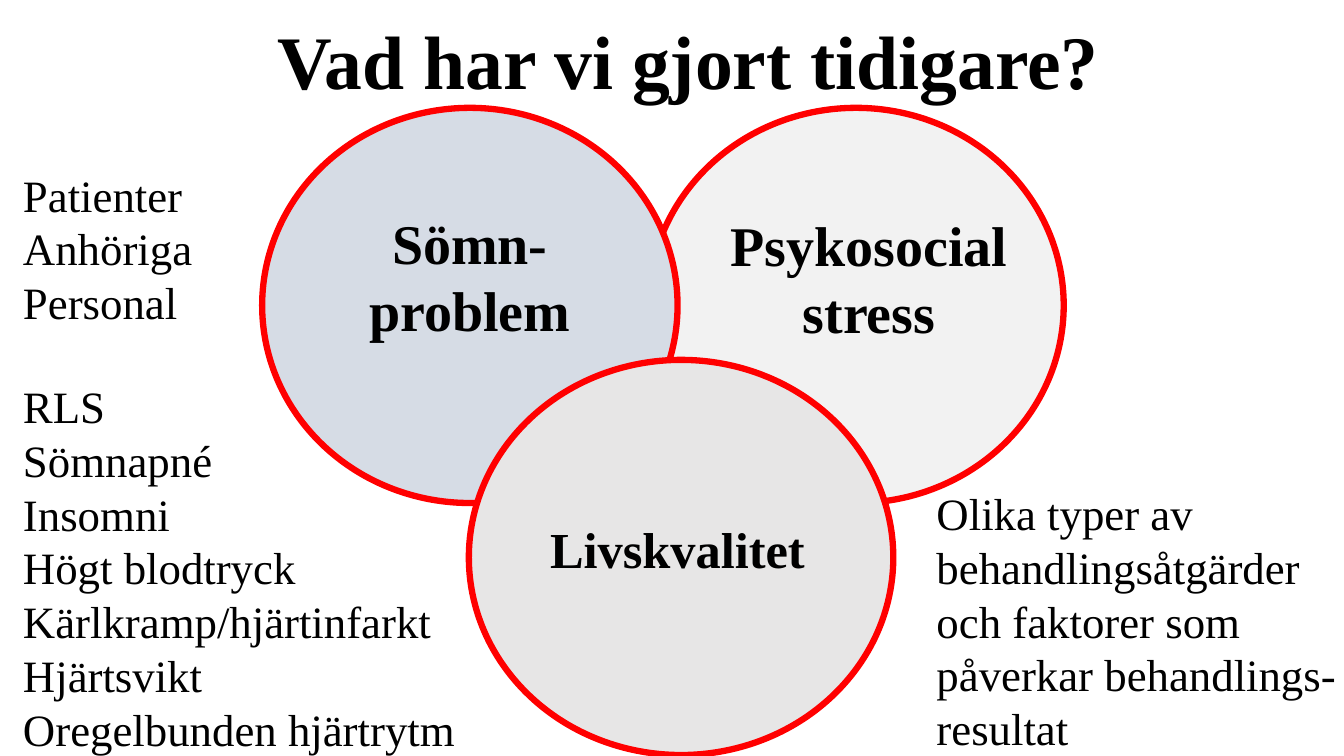
import pptx
import pptx.util
import pptx.dml.color
import pptx.enum.shapes
import pptx.enum.text

Inches = pptx.util.Inches
ALIGN = pptx.enum.text.PP_ALIGN
FONT = "Times New Roman"


def color(hex_value):
    return pptx.dml.color.RGBColor.from_string(hex_value)


def write_lines(frame, lines, size, bold=False, align=ALIGN.LEFT, spacing=None):
    font_format = {"name": FONT, "size": pptx.util.Pt(size), "bold": bold}
    for index, line in enumerate(lines):
        paragraph = frame.add_paragraph() if index else frame.paragraphs[0]
        paragraph.alignment = align
        paragraph.line_spacing = spacing
        run = paragraph.add_run()
        run.text = line
        for key, value in font_format.items():
            setattr(run.font, key, value)
        run.font.color.rgb = color("000000")


def add_text(slide, box, lines, size, wrap=False, **style):
    frame = slide.shapes.add_textbox(*map(Inches, box)).text_frame
    frame.word_wrap = wrap
    write_lines(frame, lines, size, **style)


def add_title(slide, box, text):
    title = slide.shapes.title
    placement = dict(zip(("left", "top", "width", "height"), map(Inches, box)))
    for key, value in placement.items():
        setattr(title, key, value)
    title.text_frame.vertical_anchor = pptx.enum.text.MSO_ANCHOR.MIDDLE
    write_lines(title.text_frame, [text], 54, bold=True, align=ALIGN.CENTER, spacing=0.9)


def add_circle(slide, box, fill):
    circle = slide.shapes.add_shape(
        pptx.enum.shapes.MSO_SHAPE.OVAL, *map(Inches, box))
    circle.shadow.inherit = False
    circle.fill.solid()
    circle.fill.fore_color.rgb = color(fill)
    circle.line.color.rgb = color("FF0000")
    circle.line.width = pptx.util.Pt(4.5)


def add_venn(slide, box):
    left, top, width, height = box
    diameter_x, diameter_y = 4.12, 3.92
    lower_top = top + height - diameter_y
    add_circle(slide, (left + width - diameter_x, top, diameter_x, diameter_y), "F2F2F2")
    add_circle(slide, (left, top, diameter_x, diameter_y), "D6DCE5")
    add_circle(slide, (left + 2.05, lower_top, 4.21, diameter_y), "E7E6E6")
    labels = [
        (4.22, 0.97, 1.45, ["Psykosocial stress"], 40),
        (0.26, 0.95, 1.45, ["Sömn-", "problem"], 40),
        (2.32, 4.02, 0.71, ["Livskvalitet"], 36),
    ]
    for dx, dy, label_height, lines, size in labels:
        add_text(slide, (left + dx, top + dy, 3.6, label_height), lines, size,
                 wrap=True, bold=True, align=ALIGN.CENTER)


def add_side_lists(slide, box):
    left, top, width, height = box
    groups = ["Patienter", "Anhöriga", "Personal"]
    diagnoses = ["RLS", "Sömnapné", "Insomni", "Högt blodtryck",
                 "Kärlkramp/hjärtinfarkt", "Hjärtsvikt", "Oregelbunden hjärtrytm"]
    treatments = ["Olika typer av", "behandlingsåtgärder", "och faktorer som",
                  "påverkar behandlings-", "resultat"]
    add_text(slide, (left, top, 1.9, 1.72), groups, 32)
    add_text(slide, (left + width - 4.2, top + 3.16, 4.2, 2.79), treatments, 32)
    add_text(slide, (left, top + 2.1, 4.53, 3.87), diagnoses, 32)


def main():
    presentation = pptx.Presentation()
    presentation.slide_width = Inches(13.33)
    presentation.slide_height = Inches(7.5)
    slide = presentation.slides.add_slide(presentation.slide_layouts[5])
    add_venn(slide, (2.6, 1.07, 7.95, 6.42))
    add_side_lists(slide, (0.13, 1.61, 13.26, 5.97))
    add_title(slide, (0.09, -0.08, 13.47, 1.45), "Vad har vi gjort tidigare?")
    presentation.save("out.pptx")


if __name__ == "__main__":
    main()
